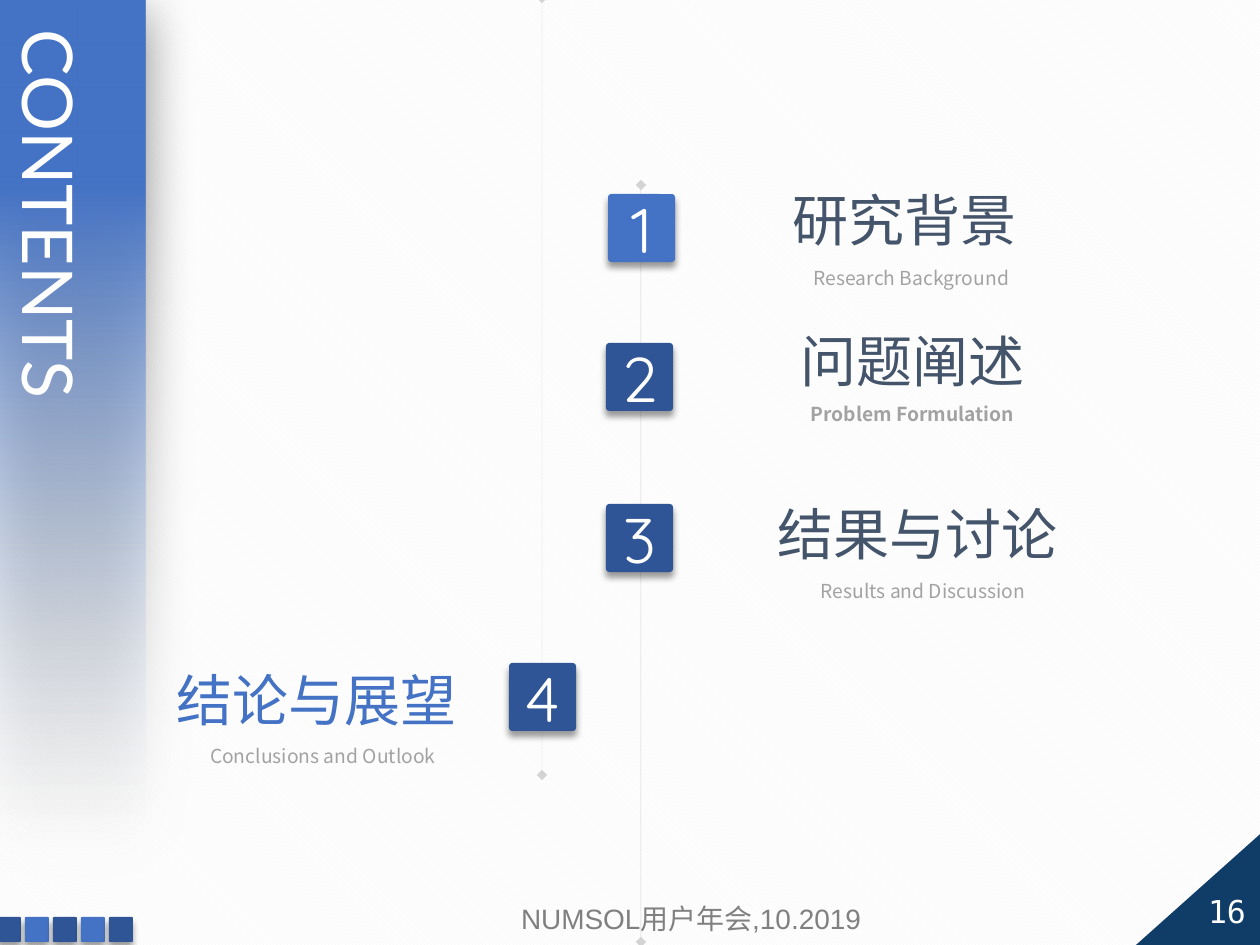
from lxml import etree
from pptx import Presentation
from pptx import util as u
from pptx.dml.color import RGBColor
from pptx.enum import dml, shapes, text
from pptx.oxml.ns import nsdecls, qn
from pptx.oxml import parse_xml

SCALE = 914400 / 126  # EMU in one px
HUES = {
    "blue": "4472C4", "navy": "2F5597", "deep": "0F3D68", "slate": "44546A",
    "pale": "F7FAFD", "gray": "808080", "note": "A2A2A2", "white": "FFFFFF",
    "mist": "F2F2F2", "black": "000000",
}
CJK = "Noto Sans CJK SC"
KIND = shapes.MSO_SHAPE
MID = text.PP_ALIGN.CENTER


def px(*nums):
    return [u.Emu(round(n * SCALE)) for n in nums]


def rgb(hue):
    return RGBColor.from_string(HUES[hue])


class Deck:
    def __init__(self):
        self.prs = Presentation()
        self.prs.slide_width, self.prs.slide_height = px(1260, 945)
        self.slide = self.prs.slides.add_slide(self.prs.slide_layouts[5])

    def back(self):
        fill = self.slide.background.fill
        fill.patterned()
        fill.pattern = dml.MSO_PATTERN.LIGHT_DOWNWARD_DIAGONAL
        fill.fore_color.rgb = rgb("mist")
        fill.back_color.rgb = rgb("white")

    def letter(self, frame, words, size, font, hue, align=MID, bold=False):
        """Put one styled paragraph into the frame."""
        frame.text = words
        para = frame.paragraphs[0]
        para.alignment = align
        face = para.font
        face.size, face.name, face.bold = u.Pt(size), font, bold
        face.color.rgb = rgb(hue)
        base = para._p.pPr.find(qn("a:defRPr"))
        etree.SubElement(base, qn("a:ea")).set("typeface", CJK)

    def label(self, box, words, size, font, hue, wrap=False, middle=False, **look):
        frame = self.slide.shapes.add_textbox(*px(*box)).text_frame
        frame.word_wrap = wrap
        if middle:
            frame.vertical_anchor = text.MSO_ANCHOR.MIDDLE
        self.letter(frame, words, size, font, hue, **look)

    def shape(self, kind, box, hue):
        shape = self.slide.shapes.add_shape(kind, *px(*box))
        shape.shadow.inherit = False
        shape.fill.solid()
        shape.fill.fore_color.rgb = rgb(hue)
        shape.line.fill.background()
        return shape

    def shade(self, shape, alpha, blur, dist, angle):
        """Give the shape an outer shadow; blur and dist are in points."""
        effects = shape._element.spPr.find(qn("a:effectLst"))
        effects.append(parse_xml(
            f'<a:outerShdw {nsdecls("a")} blurRad="{u.Pt(blur)}" '
            f'dist="{u.Pt(dist)}" dir="{angle * 60000}" algn="ctr" rotWithShape="0">'
            f'<a:srgbClr val="{HUES["black"]}"><a:alpha val="{alpha * 1000}"/>'
            '</a:srgbClr></a:outerShdw>'))

    def tile(self, box, hue, words=""):
        tile = self.shape(KIND.ROUNDED_RECTANGLE, box, hue)
        tile.adjustments[0] = 0.05
        self.shade(tile, 40, 4, 3, 90)
        if words:
            frame = tile.text_frame
            frame.word_wrap = False
            frame.vertical_anchor = text.MSO_ANCHOR.MIDDLE
            self.letter(frame, words, 36, "Quicksand", "white")

    def rail(self, x, top, end):
        """Draw a faint upright line with a diamond at each end."""
        rail = self.slide.shapes.add_connector(
            shapes.MSO_CONNECTOR.STRAIGHT, *px(x, top, x, end))
        rail.line.width = u.Pt(0.25)
        rail.line.color.rgb = rgb("gray")
        props = rail._element.spPr
        line = props.find(qn("a:ln"))
        color = line.find(".//" + qn("a:srgbClr"))
        etree.SubElement(color, qn("a:alpha")).set("val", "33000")
        for end_tag in ("a:headEnd", "a:tailEnd"):
            etree.SubElement(line, qn(end_tag)).set("type", "diamond")
        etree.SubElement(props, qn("a:effectLst"))

    def corner(self, box):
        wedge = self.shape(KIND.RIGHT_TRIANGLE, box, "deep")
        wedge._element.spPr.xfrm.set("flipH", "1")

    def band(self, box):
        """Draw the side band, which fades out towards its foot."""
        band = self.shape(KIND.RECTANGLE, box, "blue")
        props = band._element.spPr
        fade = parse_xml(
            f'<a:gradFill {nsdecls("a")} rotWithShape="1"><a:gsLst>'
            f'<a:gs pos="0"><a:srgbClr val="{HUES["blue"]}"/></a:gs>'
            f'<a:gs pos="22000"><a:srgbClr val="{HUES["blue"]}"/></a:gs>'
            f'<a:gs pos="100000"><a:srgbClr val="{HUES["pale"]}">'
            '<a:alpha val="0"/></a:srgbClr></a:gs></a:gsLst>'
            '<a:lin ang="5400000" scaled="0"/></a:gradFill>')
        props.replace(props.find(qn("a:solidFill")), fade)
        self.shade(band, 50, 31, 6, 97)

    def title(self, box, words):
        """Set the title upright and bring it to the front."""
        title = self.slide.shapes.title
        title.left, title.top, title.width, title.height = px(*box)
        frame = title.text_frame
        frame.word_wrap = True
        frame.auto_size = text.MSO_AUTO_SIZE.NONE
        frame.vertical_anchor = text.MSO_ANCHOR.TOP
        frame._txBody.bodyPr.set("vert", "eaVert")
        self.letter(frame, words, 40, "Lato", "white", align=text.PP_ALIGN.LEFT)
        self.slide.shapes._spTree.append(title._element)


# tile place and hue, heading box, note box, wording, heading hue, bold note
TOPICS = [
    ((608, 194), "blue", (780, 179, 252), (798, 260, 227),
     "研究背景", "Research Background", "slate", False),
    ((606, 343), "navy", (788, 320, 252), (796, 396, 233),
     "问题阐述", "Problem Formulation", "slate", True),
    ((606, 504), "navy", (765, 493, 309), (805, 573, 236),
     "结果与讨论", "Results and Discussion", "slate", False),
    ((509, 663), "navy", (164, 659, 309), (193, 738, 260),
     "结论与展望", "Conclusions and Outlook", "blue", False),
]


def main():
    deck = Deck()
    deck.back()
    deck.label((417, 895, 548, 63), "NUMSOL用户年会,10.2019", 16, "Arial", "gray",
               wrap=True)
    deck.corner((1136, 828, 131, 117))
    deck.label((1159, 876, 136, 69), "16", 18, "DejaVu Sans Mono", "white",
               middle=True)
    deck.rail(641, 185, 942)
    deck.rail(542, -2, 775)
    for num, (spot, hue, head, note, name, gloss, ink, bold) in enumerate(TOPICS, 1):
        deck.tile((*spot, 67, 68), hue, str(num))
        deck.label((*head, 81), name, 32, CJK, ink, align=text.PP_ALIGN.LEFT)
        deck.label((*note, 37), gloss, 11, CJK, "note", bold=bold)
    deck.band((0, 0, 145, 841))
    for i in range(5):
        deck.tile((28 * i - 3, 917, 24, 25), "blue" if i % 2 else "navy")
    deck.title((-6, 23, 111, 558), "CONTENTS")
    deck.prs.save("out.pptx")


if __name__ == "__main__":
    main()
